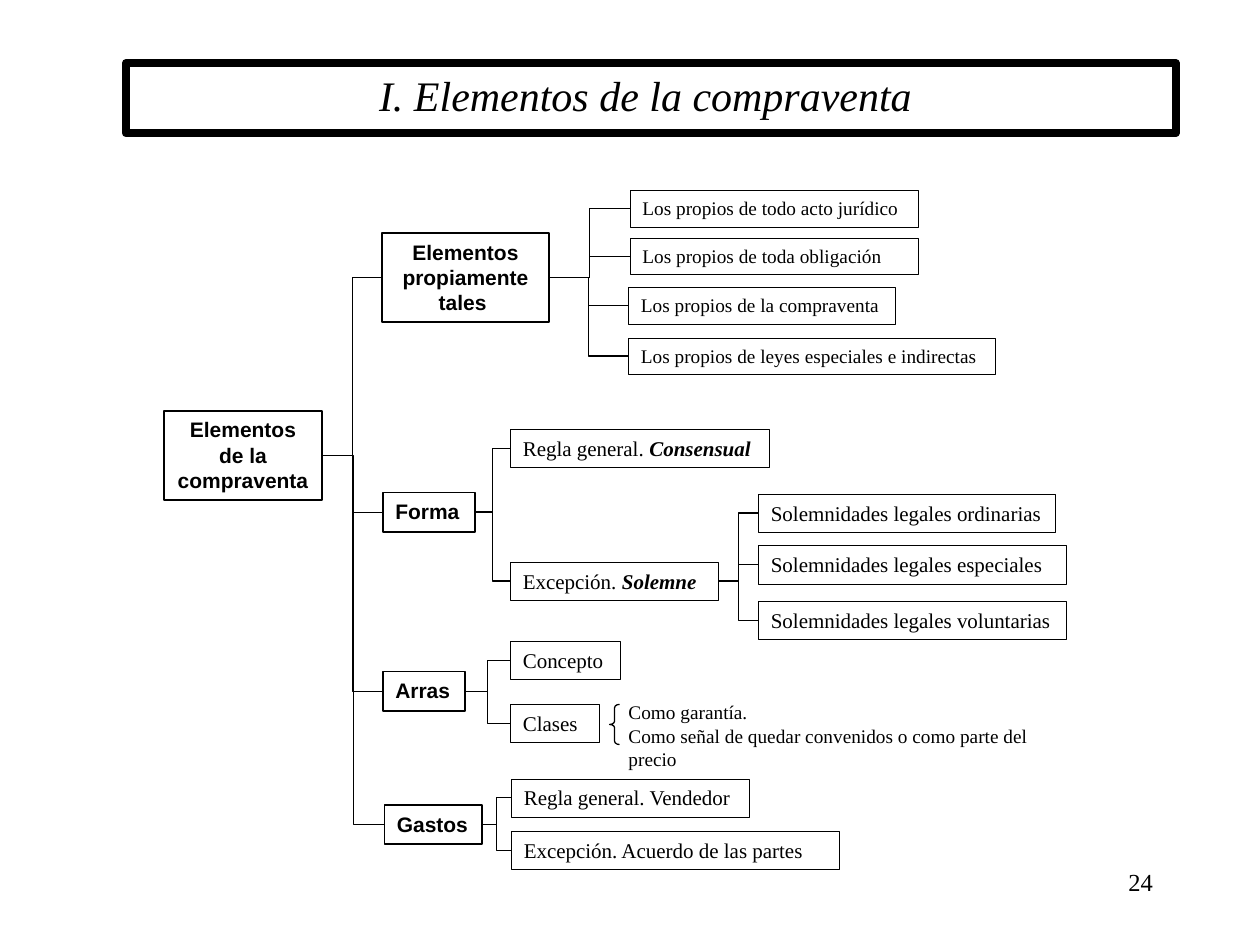
from lxml import etree
from pptx import Presentation
from pptx.dml.color import RGBColor
from pptx.enum.shapes import MSO_CONNECTOR as CONN, MSO_SHAPE as SHAPE
from pptx.enum.text import MSO_ANCHOR as ANCHOR, MSO_AUTO_SIZE as AUTO, PP_ALIGN as ALIGN
from pptx.oxml.ns import qn
from pptx.util import Cm, Pt

BLACK = "000000"
SERIF, SANS = "Times New Roman", "Arial"


def rgb(value):
    return RGBColor.from_string(value)


def write(sp, paragraphs, font, size, align=ALIGN.LEFT, wrap=True, styles=("",)):
    tf = sp.text_frame
    tf.word_wrap = wrap
    tf.auto_size = AUTO.SHAPE_TO_FIT_TEXT
    tf.vertical_anchor = ANCHOR.TOP
    for i, runs in enumerate(paragraphs):
        p = tf.paragraphs[0] if i == 0 else tf.add_paragraph()
        p.alignment = align
        for text, style in zip(runs, styles):
            r = p.add_run()
            r.text = text
            r.font.name = font
            r.font.size = Pt(size)
            r.font.bold = "b" in style
            r.font.italic = "i" in style
            r.font.color.rgb = rgb(BLACK)


prs = Presentation()
prs.slide_width, prs.slide_height = Cm(25.4), Cm(19.05)
s = prs.slides.add_slide(prs.slide_layouts[6])

sp = s.shapes.add_textbox(Cm(18.21), Cm(17.35), Cm(5.28), Cm(1.27))
write(sp, [["24"]], SERIF, 14, ALIGN.RIGHT)

sp = s.shapes.add_shape(SHAPE.RECTANGLE, Cm(2.54), Cm(1.27), Cm(21.16), Cm(1.42))
sp.shadow.inherit = False
sp.fill.background()
sp.line.color.rgb = rgb(BLACK)
sp.line.width = Pt(4.5)
write(sp, [["I. Elementos de la compraventa "]], SERIF, 24, ALIGN.CENTER, styles=["i"])

styles = {
    "main": dict(font=SANS, size=12, align=ALIGN.CENTER, styles=["b"]),
    "branch": dict(font=SANS, size=12, wrap=False, styles=["b"]),
    "leaf": dict(font=SERIF, size=12, styles=["", "bi"]),
    "small": dict(font=SERIF, size=11),
}
heights = {"main": 1.8, "branch": 0.79, "leaf": 0.77, "small": 0.74}
nodes = [
    ("root", None, "main", 3.3, 8.28, 3.2, ["Elementos de la compraventa"]),
    ("propios", "root", "main", 7.7, 4.7, 3.37, ["Elementos propiamente tales "]),
    ("forma", "root", "branch", 7.72, 9.93, 1.85, ["Forma"]),
    ("arras", "root", "branch", 7.72, 13.54, 1.65, ["Arras"]),
    ("gastos", "root", "branch", 7.75, 16.23, 1.97, ["Gastos"]),
    ("acto", "propios", "small", 12.7, 3.84, 5.82, ["Los propios de todo acto jurídico"]),
    ("obligación", "propios", "small", 12.7, 4.8, 5.82, ["Los propios de toda obligación"]),
    ("compraventa", "propios", "small", 12.67, 5.79, 5.38, ["Los propios de la compraventa"]),
    ("leyes", "propios", "small", 12.67, 6.81, 7.39,
     ["Los propios de leyes especiales e indirectas"]),
    ("consensual", "forma", "leaf", 10.29, 8.66, 5.21, ["Regla general. ", "Consensual"]),
    ("solemne", "forma", "leaf", 10.29, 11.33, 4.19, ["Excepción. ", "Solemne"]),
    ("ordinarias", "solemne", "leaf", 15.29, 9.96, 5.99, ["Solemnidades legales ordinarias"]),
    ("especiales", "solemne", "leaf", 15.29, 11, 6.2, ["Solemnidades legales especiales"]),
    ("voluntarias", "solemne", "leaf", 15.29, 12.12, 6.2, ["Solemnidades legales voluntarias"]),
    ("concepto", "arras", "leaf", 10.29, 12.93, 2.21, ["Concepto"]),
    ("clases", "arras", "leaf", 10.29, 14.2, 1.8, ["Clases"]),
    ("vendedor", "gastos", "leaf", 10.31, 15.7, 4.8, ["Regla general. Vendedor"]),
    ("acuerdo", "gastos", "leaf", 10.31, 16.76, 6.6, ["Excepción. Acuerdo de las partes"]),
]

boxes = {}
for name, parent, kind, x, y, w, runs in nodes:
    sp = s.shapes.add_shape(SHAPE.RECTANGLE, Cm(x), Cm(y), Cm(w), Cm(heights[kind]))
    sp.shadow.inherit = False
    sp.fill.background()
    sp.line.color.rgb = rgb(BLACK)
    sp.line.width = Pt(1 if kind in ("main", "branch") else 0.25)
    write(sp, [runs], **styles[kind])
    boxes[name] = sp
    if parent:
        c = s.shapes.add_connector(CONN.ELBOW, 0, 0, 0, 0)
        c.begin_connect(boxes[parent], 3)
        c.end_connect(sp, 1)
        c.line.color.rgb = rgb(BLACK)
        c.line.width = Pt(0.75)
        etree.SubElement(c._element.spPr, qn("a:effectLst"))

sp = s.shapes.add_textbox(Cm(12.42), Cm(14), Cm(9.58), Cm(1.19))
write(sp, [["Como garantía."], ["Como señal de quedar convenidos o como parte del precio"]], SERIF, 11)

sp = s.shapes.add_shape(SHAPE.LEFT_BRACE, Cm(12.29), Cm(14.2), Cm(0.2), Cm(0.81))
sp.adjustments[0] = 0.34
sp.shadow.inherit = False
sp.fill.background()
sp.line.color.rgb = rgb(BLACK)
sp.line.width = Pt(0.75)

prs.save("out.pptx")
